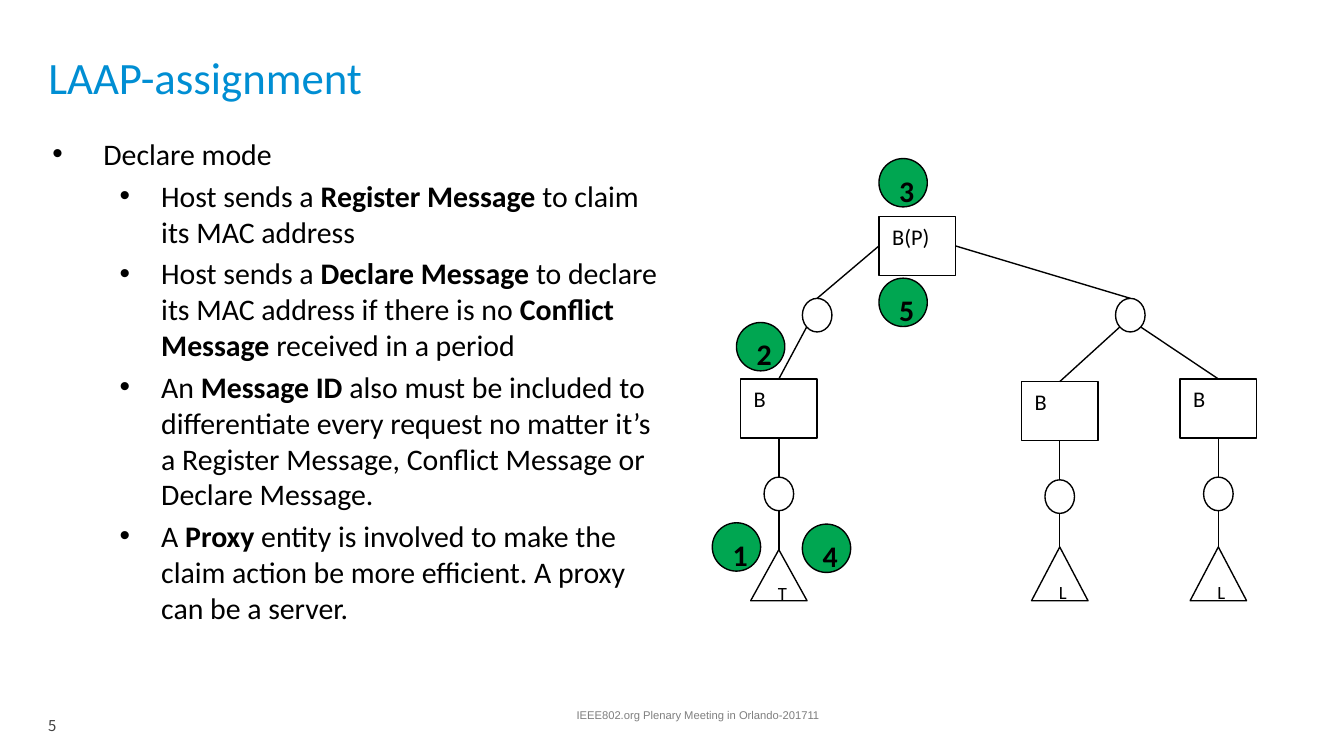
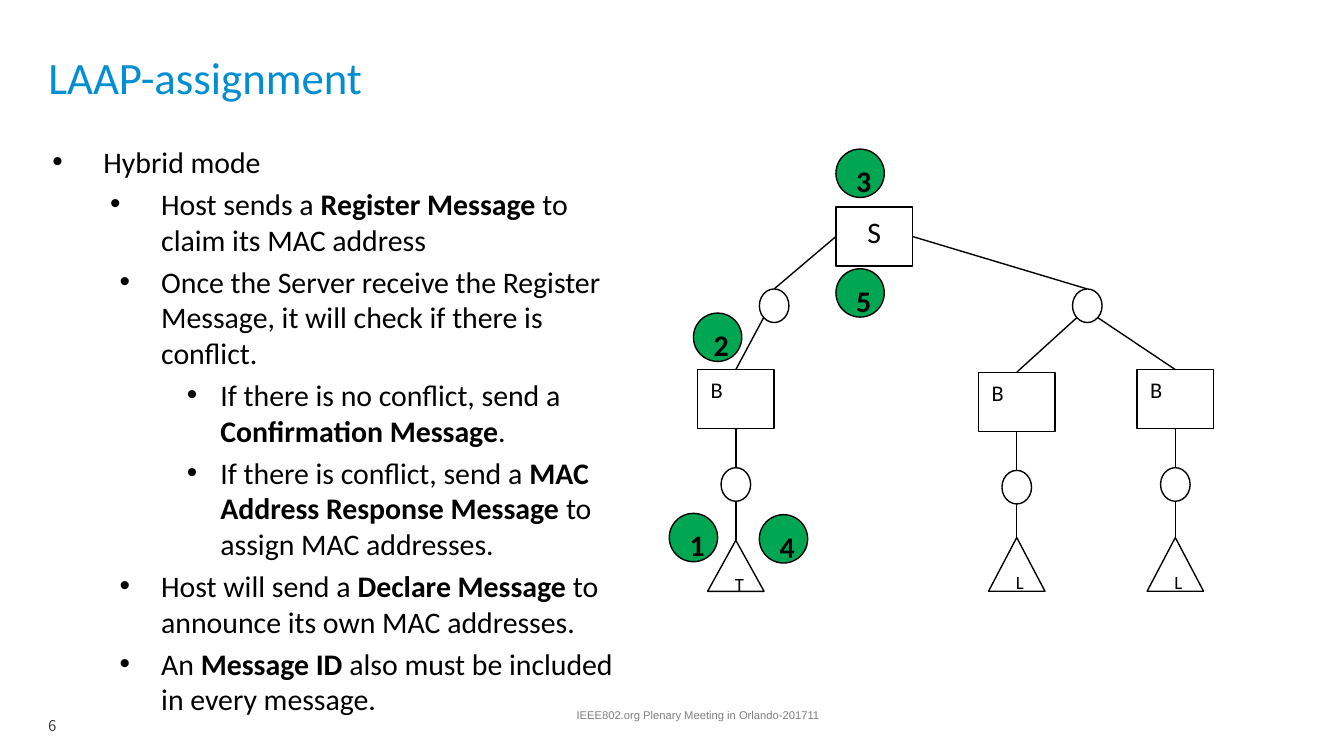
from lxml import etree
from pptx import Presentation
from pptx import util as u
from pptx.dml.color import RGBColor
from pptx.enum import shapes, text
from pptx.oxml.ns import qn

WIDTH = 10
HEIGHT = WIDTH * 9 / 16
BLACK, BLUE, GREEN, DARK, GREY = "000000", "008ED3", "00A651", "404040", "7F7F7F"
FOOTER = "IEEE802.org Plenary Meeting in Orlando-201711"
TITLE = "LAAP-assignment"

INDENTS = {"mode": (0, 0.38, 0.38), "step": (1, 0.81, 0.31),
           "wide step": (1, 0.81, 0.38), "case": (2, 1.25, 0.25)}

SLIDES = [
    {"number": "5", "body": (0.39, 1.01, 4.56, 4.1), "origin": (6.54, 1.61),
     "root": ("B(P)", 12, "left"),
     "points": [
         ("mode", "Declare mode"),
         ("step", "Host sends a **Register Message **to claim its MAC address"),
         ("step", "Host sends a **Declare Message **to declare its MAC address if there "
                  "is no **Conflict Message **received in a period"),
         ("step", "An **Message ID **also must be included to differentiate every request "
                  "no matter it’s a Register Message, Conflict Message or Declare Message."),
         ("step", "A** Proxy **entity is involved to make the claim action be more "
                  "efficient. A proxy can be a server."),
     ]},
    {"number": "6", "body": (0.39, 1.07, 4.2, 3.64), "origin": (6.22, 1.54),
     "root": ("S", 16, "center"),
     "points": [
         ("mode", "Hybrid mode"),
         ("wide step", "Host sends a **Register Message **to claim its MAC address"),
         ("step", "Once the Server receive the Register Message, it will check if there "
                  "is conflict."),
         ("case", "If there is no conflict, send a **Confirmation Message**."),
         ("case", "If there is conflict, send a **MAC Address Response Message** to "
                  "assign MAC addresses."),
         ("step", "Host will send a **Declare Message **to announce its own MAC addresses."),
         ("step", "An **Message ID **also must be included in every message."),
     ]},
]

BRIDGE_W, BRIDGE_H = 0.57, 0.44
PORT_W, PORT_H = 0.22, 0.25
HOST_W, HOST_BASE = 0.42, 2.86
BADGE = 0.36
PORT_DROP = 0.73
DIAGONAL = 0.5 ** 0.5

HUBS = [(-0.57, 0.61), (1.76, 0.61)]
BRANCHES = [
    {"at": (-1.03, 1.21), "host": "T", "host_h": 0.38, "hub": 0, "side": -1},
    {"at": (1.06, 1.23), "host": "L", "host_h": 0.4, "hub": 1, "side": -1},
    {"at": (2.24, 1.21), "host": "L", "host_h": 0.4, "hub": 1, "side": 1},
]
BADGES = [("1", -1.24, 2.28), ("2", -1.06, 0.79), ("3", 0, -0.43),
          ("4", -0.57, 2.29), ("5", 0, 0.46)]
ALIGN = {"left": text.PP_ALIGN.LEFT, "center": text.PP_ALIGN.CENTER}


def color(value):
    return RGBColor.from_string(value)


def inches(*lengths):
    return [u.Inches(length) for length in lengths]


def write(paragraph, words, size=16, font="Calibri", fill=BLACK, bold=False, align="left"):
    paragraph.alignment = ALIGN[align]
    for i, part in enumerate(words.split("**")):
        run = paragraph.add_run()
        run.text = part
        run.font.size = u.Pt(size)
        run.font.name = font
        run.font.bold = bold or i % 2 == 1
        run.font.color.rgb = color(fill)


def text_frame(slide, place, margin=0, anchor=text.MSO_ANCHOR.TOP):
    frame = slide.shapes.add_textbox(*inches(*place)).text_frame
    frame.word_wrap = True
    frame.vertical_anchor = anchor
    frame.margin_left = frame.margin_right = u.Inches(margin)
    frame.margin_top = frame.margin_bottom = u.Inches(margin / 2)
    return frame


def add_points(slide, place, points):
    frame = text_frame(slide, place)
    for i, (kind, words) in enumerate(points):
        paragraph = frame.add_paragraph() if i else frame.paragraphs[0]
        level, left, hanging = INDENTS[kind]
        paragraph.level = level
        paragraph.space_before = u.Pt(3.2 if i else 0)
        write(paragraph, words)
        props = paragraph._p.get_or_add_pPr()
        props.set("marL", str(u.Inches(left)))
        props.set("indent", str(-u.Inches(hanging)))
        etree.SubElement(props, qn("a:buFont")).set("typeface", "Arial")
        etree.SubElement(props, qn("a:buChar")).set("char", "•")


def add_node(slide, kind, place, words="", fill=None, **style):
    node = slide.shapes.add_shape(kind, *inches(*place))
    node.shadow.inherit = False
    if fill:
        node.fill.solid()
        node.fill.fore_color.rgb = color(fill)
    else:
        node.fill.background()
    node.line.color.rgb = color(BLACK)
    node.line.width = u.Pt(0.75)
    node.text_frame.vertical_anchor = text.MSO_ANCHOR.TOP
    if words:
        write(node.text_frame.paragraphs[0], words, **style)
    return node


def add_link(slide, start, end, bridge=None, side=0):
    link = slide.shapes.add_connector(shapes.MSO_CONNECTOR.STRAIGHT, *inches(*start, *end))
    link.line.color.rgb = color(BLACK)
    link.line.width = u.Pt(0.75)
    etree.SubElement(link._element.spPr, qn("a:effectLst"))
    if bridge is not None:
        link.begin_connect(bridge, side)


def add_tree(slide, origin, root_label):
    x0, y0 = origin
    kinds = shapes.MSO_SHAPE
    words, size, align = root_label
    root = add_node(slide, kinds.RECTANGLE, (x0, y0, BRIDGE_W, BRIDGE_H), words,
                    size=size, align=align)

    hub_centers = []
    for (dx, dy), root_side in zip(HUBS, (1, 3)):
        x, y = x0 + dx, y0 + dy
        add_node(slide, kinds.OVAL, (x, y, PORT_W, PORT_H))
        root_x = x0 if root_side == 1 else x0 + BRIDGE_W
        add_link(slide, (root_x, y0 + BRIDGE_H / 2), (x + PORT_W / 2, y), root, root_side)
        hub_centers.append((x + PORT_W / 2, y + PORT_H / 2))

    for branch in BRANCHES:
        x, y = x0 + branch["at"][0], y0 + branch["at"][1]
        spine = x + BRIDGE_W / 2
        port_y = y + PORT_DROP
        host_y = y0 + HOST_BASE - branch["host_h"]
        hub_x, hub_y = hub_centers[branch["hub"]]
        hub_edge = (hub_x + branch["side"] * DIAGONAL * PORT_W / 2,
                    hub_y + DIAGONAL * PORT_H / 2)
        bridge = add_node(slide, kinds.RECTANGLE, (x, y, BRIDGE_W, BRIDGE_H), "B", size=12)
        add_node(slide, kinds.OVAL, (spine - PORT_W / 2, port_y, PORT_W, PORT_H))
        add_node(slide, kinds.ISOSCELES_TRIANGLE,
                 (spine - HOST_W / 2, host_y, HOST_W, branch["host_h"]),
                 branch["host"], size=10)
        add_link(slide, (spine, y), hub_edge, bridge, 0)
        add_link(slide, (spine, y + BRIDGE_H), (spine, port_y), bridge, 2)
        add_link(slide, (spine, host_y), (spine, port_y + PORT_H))

    for number, dx, dy in BADGES:
        add_node(slide, kinds.OVAL, (x0 + dx, y0 + dy, BADGE, BADGE), number, GREEN,
                 bold=True, align="center")


def add_frame(slide, number):
    page = text_frame(slide, (0.26, 5.25, 0.46, 0.3), 0.1, text.MSO_ANCHOR.MIDDLE)
    write(page.paragraphs[0], number, size=8, font="Noto Sans CJK SC", fill=DARK)
    footer = text_frame(slide, (4.29, 5.27, 2.4, 0.14))
    write(footer.paragraphs[0], FOOTER, size=6, font="Arial", fill=GREY)
    title = text_frame(slide, (0.36, 0.37, 9.31, 0.79))
    write(title.paragraphs[0], TITLE, size=24, fill=BLUE)


def main():
    deck = Presentation()
    deck.slide_width, deck.slide_height = inches(WIDTH, HEIGHT)
    for content in SLIDES:
        slide = deck.slides.add_slide(deck.slide_layouts[6])
        add_frame(slide, content["number"])
        add_points(slide, content["body"], content["points"])
        add_tree(slide, content["origin"], content["root"])
    deck.save("out.pptx")


if __name__ == "__main__":
    main()
